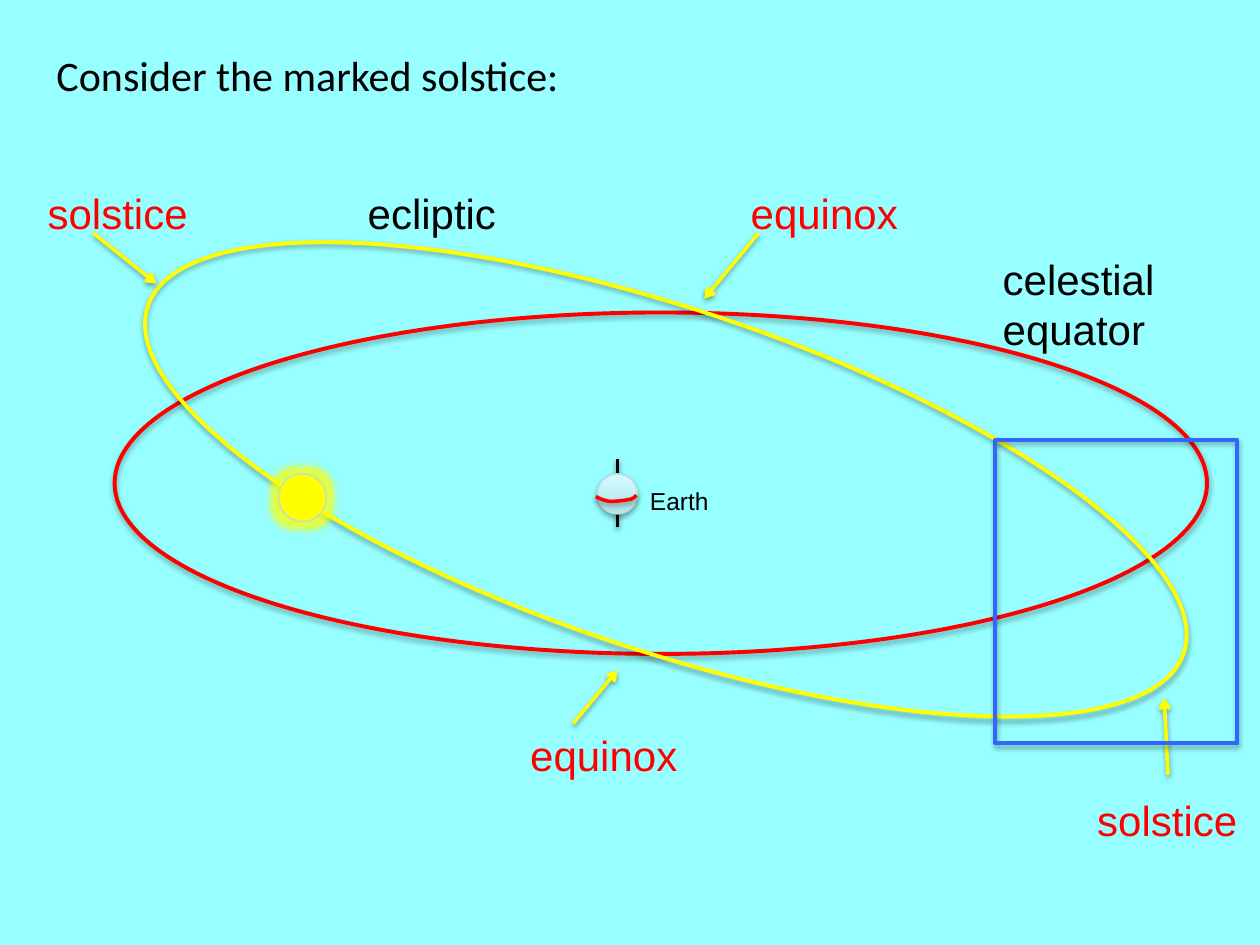
"""Draw the ecliptic and the celestial equator around Earth, with one solstice marked."""
from dataclasses import dataclass
from typing import Any, Optional

from lxml import etree
from pptx import Presentation
from pptx import util as u
from pptx.dml.color import RGBColor
from pptx.enum import shapes, text
from pptx.oxml import ns


@dataclass(frozen=True)
class Theme:
    background: str = "97FFFF"
    ink: str = "000000"
    red: str = "FF0000"
    yellow: str = "FFFF00"
    frame: str = "3366FF"
    rim: str = "B6DCDF"
    earth: tuple = ("B5E5E9", "D3FBFF")
    font: str = "Arial"
    title_font: str = "Calibri"
    large: float = 24
    small: float = 14
    outline: float = 2.25
    stroke: float = 2
    hairline: float = 0.75


@dataclass(frozen=True)
class Box:
    left: float
    top: float
    width: float
    height: float


@dataclass(frozen=True)
class Label:
    wording: str
    box: Box
    color: str
    size: float
    font: str
    shadow: bool = False


@dataclass(frozen=True)
class Stroke:
    start: tuple
    end: tuple
    color: str
    arrow: bool = True


@dataclass(frozen=True)
class Figure:
    kind: Any
    box: Box
    line: str
    width: float
    rotation: float = 0
    fill: Optional[str] = None
    gradient: tuple = ()
    glow: bool = False


THEME = Theme()
COLUMNS, ROWS = 100, 75
WIDTH, HEIGHT = u.Inches(10), u.Inches(7.5)
OVAL, RECTANGLE = shapes.MSO_SHAPE.OVAL, shapes.MSO_SHAPE.RECTANGLE

AXIS = Stroke((49, 36.4), (49, 41.8), THEME.ink, arrow=False)
ORBITS = [
    Figure(OVAL, Box(9.1, 24.8, 86.7, 27.1), THEME.red, THEME.outline),
    Figure(OVAL, Box(9.5, 24.5, 86.7, 27.1), THEME.yellow, THEME.outline, rotation=18.5),
]
BODIES = [
    Figure(OVAL, Box(22.1, 37.6, 3.8, 3.8), THEME.rim, THEME.hairline, fill=THEME.yellow, glow=True),
    Figure(OVAL, Box(47.4, 37.6, 3.2, 3.2), THEME.rim, THEME.hairline, gradient=THEME.earth),
]
MARKED_AREA = Figure(RECTANGLE, Box(79, 34.9, 19.2, 24.1), THEME.frame, THEME.outline)
EARTH_EQUATOR = [
    ((47.3, 39.4), (47.6, 39.6), (47.9, 39.7), (48.4, 39.8)),
    ((48.4, 39.8), (48.9, 39.8), (49.8, 39.7), (50.1, 39.6)),
    ((50.1, 39.6), (50.4, 39.5), (50.5, 39.3), (50.5, 39.3)),
]
ARROWS = [
    Stroke((7.4, 18.5), (12.4, 22.5), THEME.yellow),
    Stroke((92.7, 61.5), (92.4, 55.4), THEME.yellow),
    Stroke((45.5, 57.4), (49, 53.2), THEME.yellow),
    Stroke((60.2, 18.5), (55.9, 23.7), THEME.yellow),
]
PLAIN_LABELS = [
    Label("celestial equator", Box(78.6, 19.6, 21.4, 9), THEME.ink, THEME.large, THEME.font),
    Label("ecliptic", Box(28.2, 14.4, 14.4, 5), THEME.ink, THEME.large, THEME.font),
    Label("Earth", Box(50.6, 38.1, 10.9, 3.4), THEME.ink, THEME.small, THEME.font),
    Label("Consider the marked solstice:", Box(3.5, 3.4, 45, 5), THEME.ink, THEME.large, THEME.title_font),
]
MARKER_LABELS = [
    Label(wording, Box(left, top, 15, 5), THEME.red, THEME.large, THEME.font, shadow=True)
    for wording, left, top in [
        ("equinox", 41.1, 57.4), ("equinox", 58.6, 14.4),
        ("solstice", 2.8, 14.4), ("solstice", 86.1, 62.6),
    ]
]


def across(column: float) -> int:
    """Convert grid columns to a length."""
    return round(WIDTH * column / COLUMNS)


def down(row: float) -> int:
    """Convert grid rows to a length."""
    return round(HEIGHT * row / ROWS)


def place(box: Box) -> tuple:
    """Convert a grid box to lengths."""
    return across(box.left), down(box.top), across(box.width), down(box.height)


def add_effect(parent: Any, kind: str, color: str, alpha: int, **attributes: int) -> Any:
    """Append an effect list holding one coloured effect."""
    effects = etree.SubElement(parent, ns.qn("a:effectLst"))
    values = {name: str(value) for name, value in attributes.items()}
    effect = etree.SubElement(effects, ns.qn(f"a:{kind}"), values)
    paint = etree.SubElement(effect, ns.qn("a:srgbClr"), val=color)
    etree.SubElement(paint, ns.qn("a:alpha"), val=str(alpha * 1000))
    return effects


def add_drop_shadow(shape: Any, distance: float, alpha: int) -> None:
    """Cast a soft shadow straight down."""
    add_effect(shape._element.spPr, "outerShdw", THEME.ink, alpha, blurRad=u.Pt(3.1),
               dist=u.Pt(distance), dir=5400000, rotWithShape=0)


def set_line(shape: Any, color: str, width: float) -> None:
    """Colour and size an outline."""
    shape.line.color.rgb = RGBColor.from_string(color)
    shape.line.width = u.Pt(width)


def draw_figure(container: Any, figure: Figure) -> None:
    """Draw a preset shape with its fill, outline and shadow."""
    shape = container.add_shape(figure.kind, *place(figure.box))
    shape.rotation = figure.rotation
    if figure.gradient:
        shape.fill.gradient()
        shape.fill.gradient_angle = 90
        for stop, color in zip(shape.fill.gradient_stops, figure.gradient):
            stop.color.rgb = RGBColor.from_string(color)
    elif figure.fill:
        shape.fill.solid()
        shape.fill.fore_color.rgb = RGBColor.from_string(figure.fill)
    else:
        shape.fill.background()
    set_line(shape, figure.line, figure.width)
    if figure.glow:
        add_effect(shape._element.spPr, "glow", THEME.yellow, 75, rad=u.Pt(8))
    else:
        add_drop_shadow(shape, 1.8, 35)


def draw_stroke(container: Any, stroke: Stroke) -> None:
    """Draw a straight line, with an open arrowhead if asked."""
    line = container.add_connector(shapes.MSO_CONNECTOR.STRAIGHT, across(stroke.start[0]), down(stroke.start[1]),
                                   across(stroke.end[0]), down(stroke.end[1]))
    set_line(line, stroke.color, THEME.stroke)
    if stroke.arrow:
        etree.SubElement(line.line._get_or_add_ln(), ns.qn("a:tailEnd"), type="arrow")
    add_drop_shadow(line, 1.6, 38)


def draw_curve(container: Any, curves: list, color: str, steps: int = 8) -> None:
    """Draw joined cubic curves as an open outline."""
    points = []
    for a, b, c, d in curves:
        for step in range(1, steps + 1):
            t = step / steps
            x, y = ((1 - t) ** 3 * a[i] + 3 * t * (1 - t) ** 2 * b[i] + 3 * t ** 2 * (1 - t) * c[i] + t ** 3 * d[i]
                    for i in range(2))
            points.append((across(x), down(y)))
    start = curves[0][0]
    builder = container.build_freeform(across(start[0]), down(start[1]))
    builder.add_line_segments(points, close=False)
    shape = builder.convert_to_shape()
    shape.fill.background()
    set_line(shape, color, THEME.stroke)
    add_drop_shadow(shape, 1.6, 38)


def draw_label(container: Any, label: Label) -> None:
    """Write a label in its box."""
    frame = container.add_textbox(*place(label.box)).text_frame
    frame.word_wrap = True
    frame.margin_right = 0
    frame.auto_size = text.MSO_AUTO_SIZE.SHAPE_TO_FIT_TEXT
    frame.text = label.wording
    run = frame.paragraphs[0].runs[0]
    run.font.size = u.Pt(label.size)
    run.font.color.rgb = RGBColor.from_string(label.color)
    if label.shadow:
        add_effect(run.font._element, "outerShdw", THEME.ink, 43, blurRad=u.Pt(3), dist=u.Pt(3), dir=2700000)
    run.font.name = label.font


def main() -> None:
    """Build and save the slide."""
    presentation = Presentation()
    presentation.slide_width, presentation.slide_height = WIDTH, HEIGHT
    slide = presentation.slides.add_slide(presentation.slide_layouts[6])
    slide.background.fill.solid()
    slide.background.fill.fore_color.rgb = RGBColor.from_string(THEME.background)
    draw_stroke(slide.shapes, AXIS)
    orbits = slide.shapes.add_group_shape()
    for orbit in ORBITS:
        draw_figure(orbits.shapes, orbit)
    for body in BODIES:
        draw_figure(slide.shapes, body)
    draw_curve(slide.shapes, EARTH_EQUATOR, THEME.red)
    for arrow in ARROWS:
        draw_stroke(slide.shapes, arrow)
    draw_figure(slide.shapes, MARKED_AREA)
    for label in PLAIN_LABELS + MARKER_LABELS:
        draw_label(slide.shapes, label)
    presentation.save("out.pptx")


if __name__ == "__main__":
    main()
